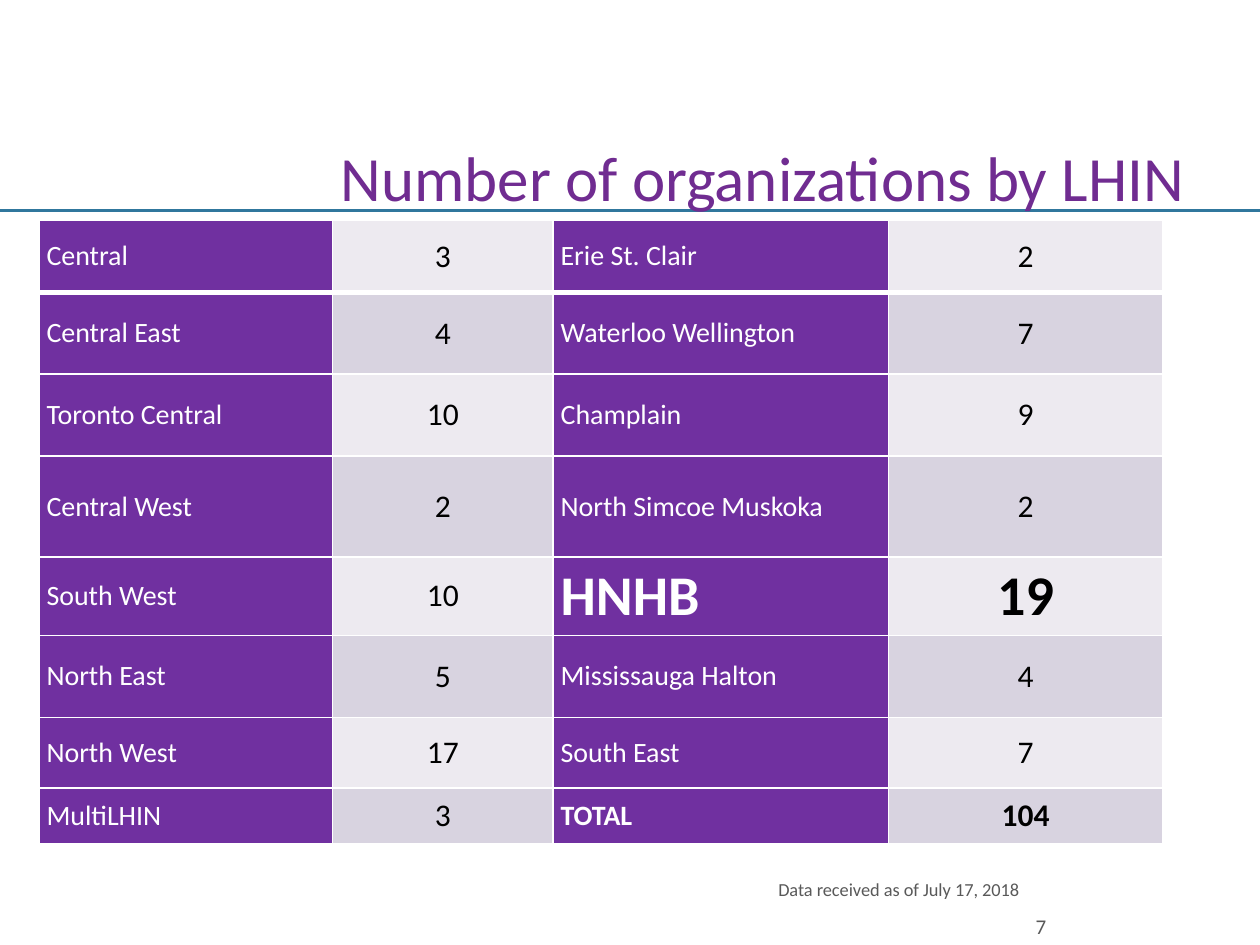
"""Build the slide that lists the number of organizations by LHIN."""
import lxml.etree
import pptx
import pptx.dml.color
import pptx.enum.shapes
import pptx.enum.text
import pptx.oxml.ns
import pptx.util

Inches = pptx.util.Inches
RGBColor = pptx.dml.color.RGBColor
ALIGN = pptx.enum.text.PP_ALIGN
ANCHOR = pptx.enum.text.MSO_ANCHOR

WHITE = RGBColor(0xFF, 0xFF, 0xFF)
BLACK = RGBColor(0, 0, 0)
GRAY = RGBColor(0x59, 0x59, 0x59)
TITLE_PURPLE = RGBColor(0x70, 0x2C, 0x91)
CELL_PURPLE = RGBColor(0x70, 0x30, 0xA0)
BANDS = [RGBColor(0xED, 0xEA, 0xF0), RGBColor(0xD8, 0xD3, 0xE0)]
BLUE = RGBColor(0x30, 0x77, 0x9D)

COLUMN_WIDTHS = [2.33, 1.75, 2.66, 2.18]
ROW_HEIGHTS = [0.57, 0.65, 0.65, 0.8, 0.61, 0.65, 0.56, 0.44]
ROWS = [
    ("Central", "3", "Erie St. Clair", "2"),
    ("Central East", "4", "Waterloo Wellington", "7"),
    ("Toronto Central", "10", "Champlain", "9"),
    ("Central West", "2", "North Simcoe Muskoka", "2"),
    ("South West", "10", "HNHB", "19"),
    ("North East", "5", "Mississauga Halton", "4"),
    ("North West", "17", "South East", "7"),
    ("MultiLHIN", "3", "TOTAL", "104"),
]


def write(frame, text, size, color, align, bold=False, **frame_format):
    for name, value in frame_format.items():
        setattr(frame, name, value)
    para = frame.paragraphs[0]
    para.alignment = align
    span = para.add_run()
    span.text = text
    font_format = {"name": "Calibri", "size": pptx.util.Pt(size), "bold": bold}
    for name, value in font_format.items():
        setattr(span.font, name, value)
    span.font.color.rgb = color


def add_border(cell, side, points):
    qn = pptx.oxml.ns.qn
    properties = cell._tc.get_or_add_tcPr()
    width = str(pptx.util.Pt(points))
    border = lxml.etree.SubElement(properties, qn(f"a:ln{side}"), w=width)
    fill = lxml.etree.SubElement(border, qn("a:solidFill"))
    lxml.etree.SubElement(fill, qn("a:srgbClr"), val=str(WHITE))


deck = pptx.Presentation()
deck.slide_width = Inches(10)
deck.slide_height = Inches(7.5)
page = deck.slides.add_slide(deck.slide_layouts[5])

title = page.shapes.title
title_place = {"left": 0.5, "top": 0, "width": 9, "height": 1.75}
for name, value in title_place.items():
    setattr(title, name, Inches(value))
write(title.text_frame, "Number of organizations by LHIN", 36, TITLE_PURPLE, ALIGN.RIGHT,
      vertical_anchor=ANCHOR.BOTTOM, auto_size=pptx.enum.text.MSO_AUTO_SIZE.NONE)

rule = page.shapes.add_connector(
    pptx.enum.shapes.MSO_CONNECTOR.STRAIGHT, 0, Inches(1.67), Inches(10), Inches(1.67))
rule.line.color.rgb = BLUE
rule.line.width = pptx.util.Pt(2)
lxml.etree.SubElement(rule.element.spPr, pptx.oxml.ns.qn("a:effectLst"))
title.element.addprevious(rule.element)

table = page.shapes.add_table(
    len(ROWS), len(COLUMN_WIDTHS), Inches(0.31), Inches(1.75),
    Inches(sum(COLUMN_WIDTHS)), Inches(sum(ROW_HEIGHTS))).table
for column, width in zip(table.columns, COLUMN_WIDTHS):
    column.width = Inches(width)
for row, height in zip(table.rows, ROW_HEIGHTS):
    row.height = Inches(height)

cell_format = {
    "vertical_anchor": ANCHOR.MIDDLE,
    "margin_left": Inches(0.06), "margin_right": Inches(0.06),
    "margin_top": Inches(0.04), "margin_bottom": Inches(0.04),
}
for row_index, row_texts in enumerate(ROWS):
    for column_index, text in enumerate(row_texts):
        cell = table.cell(row_index, column_index)
        for name, value in cell_format.items():
            setattr(cell, name, value)
        borders = {"L": 1, "R": 1, "T": 3 if row_index == 1 else 1, "B": 3 if row_index == 0 else 1}
        for side, points in borders.items():
            add_border(cell, side, points)
        is_label = column_index % 2 == 0
        cell.fill.solid()
        cell.fill.fore_color.rgb = CELL_PURPLE if is_label else BANDS[row_index % 2]
        is_highlight = text in ("HNHB", "19")
        size = 32 if is_highlight else 16 if is_label else 18
        write(cell.text_frame, text, size, WHITE if is_label else BLACK,
              ALIGN.LEFT if is_label else ALIGN.CENTER,
              bold=is_highlight or text in ("TOTAL", "104"))

number_box = page.shapes.add_textbox(Inches(8.19), Inches(7.2), Inches(0.35), Inches(0.3))
write(number_box.text_frame, "7", 12, GRAY, ALIGN.LEFT, word_wrap=True,
      vertical_anchor=ANCHOR.MIDDLE, margin_left=Inches(0.03), margin_right=Inches(0.05))

date_box = page.shapes.add_shape(
    pptx.enum.shapes.MSO_SHAPE.RECTANGLE, Inches(4.37), Inches(6.92), Inches(3.82), Inches(0.28))
date_box.shadow.inherit = False
date_box.fill.solid()
date_box.fill.fore_color.rgb = WHITE
date_box.line.fill.background()
write(date_box.text_frame, "Data received as of July 17, 2018", 10.5, GRAY, ALIGN.RIGHT,
      word_wrap=True, vertical_anchor=ANCHOR.TOP,
      auto_size=pptx.enum.text.MSO_AUTO_SIZE.SHAPE_TO_FIT_TEXT)

deck.save("out.pptx")
